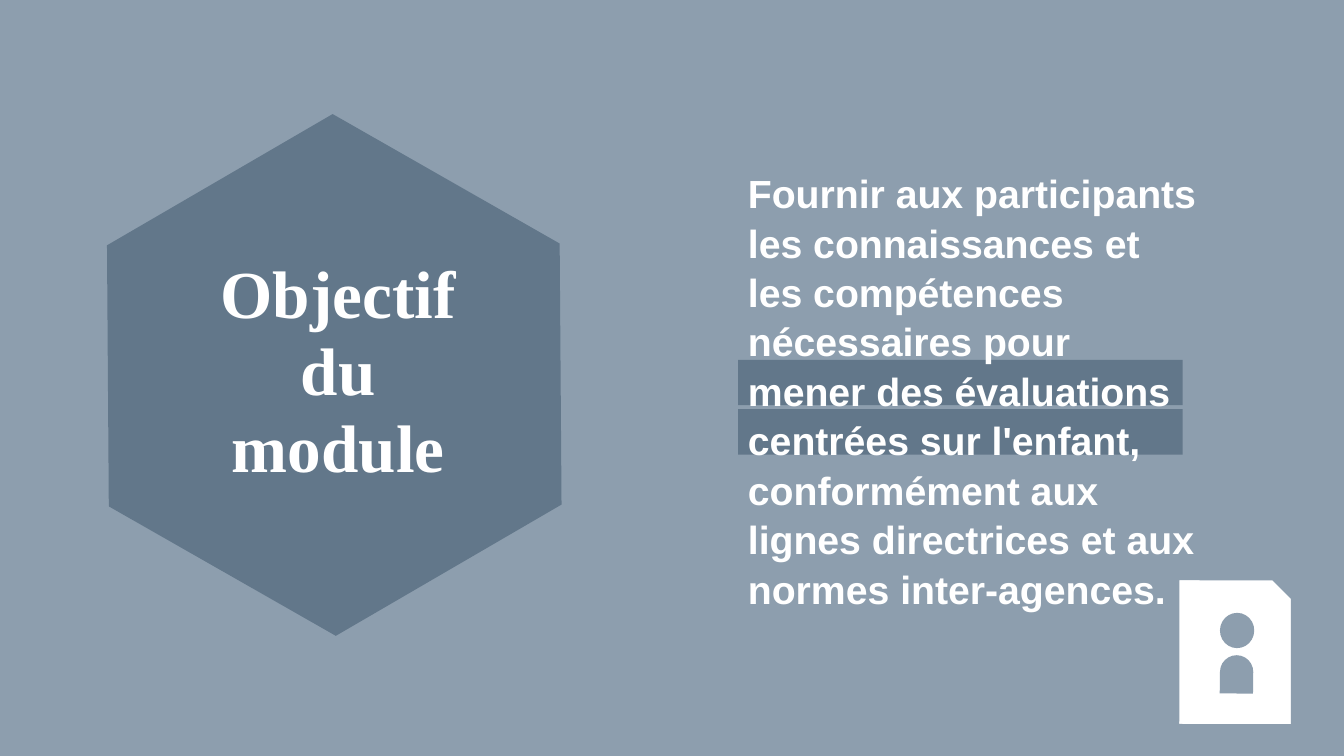
from pptx import Presentation
from pptx.dml.color import RGBColor
from pptx.enum.shapes import MSO_SHAPE as Shape
from pptx.enum.text import MSO_ANCHOR as Anchor, PP_ALIGN as Align
from pptx.util import Inches, Pt

COLORS = {"mist": "8D9EAE", "slate": "62778A", "white": "FFFFFF"}
TITLE = "Objectif du module"
GOAL = ("Fournir aux participants les connaissances et les compétences nécessaires "
        "pour mener des évaluations centrées sur l'enfant, conformément aux lignes "
        "directrices et aux normes inter-agences.")


def color(name):
    """Return the named palette colour."""
    return RGBColor.from_string(COLORS[name])


def add_block(page, kind, box, fill, rotation=0, adjustments=(), outline=None):
    """Add a flat filled shape in the box, optionally outlined."""
    shape = page.shapes.add_shape(kind, *map(Inches, box))
    shape.shadow.inherit = False
    shape.rotation = rotation
    for index, value in enumerate(adjustments):
        shape.adjustments[index] = value
    shape.fill.solid()
    shape.fill.fore_color.rgb = color(fill)
    if outline:
        shape.line.color.rgb = color(outline)
        shape.line.width = Pt(1)
    else:
        shape.line.fill.background()


def add_text(page, box, text, font, layout, anchor=Anchor.TOP):
    """Add one wrapped white bold paragraph in the box."""
    frame = page.shapes.add_textbox(*map(Inches, box)).text_frame
    frame.word_wrap = True
    frame.vertical_anchor = anchor
    para = frame.paragraphs[0]
    for name, value in layout.items():
        setattr(para, name, value)
    span = para.add_run()
    span.text = text
    for name, value in {**font, "bold": True}.items():
        setattr(span.font, name, value)
    span.font.color.rgb = color("white")


def add_title(page, left, top, width, height):
    """Draw the turned hexagon in the box with the title at its centre."""
    add_block(page, Shape.HEXAGON, (left, top, width, height), "slate", 29.7, (0.29, 1.155))
    add_text(page, (left + 1.1, top + 1.91, 3.07, 0.61), TITLE,
             {"name": "Times New Roman", "size": Pt(48)},
             {"alignment": Align.CENTER, "line_spacing": 0.95}, Anchor.MIDDLE)


def add_goal(page, left, top, width, height):
    """Write the goal in the box over the two bars that highlight its key lines."""
    for row in range(2):
        add_block(page, Shape.RECTANGLE, (left, top + 1.96 + row * 0.49, 4.41, 0.45), "slate")
    add_text(page, (left, top, width, height), GOAL,
             {"name": "Arial", "size": Pt(28)},
             {"alignment": Align.LEFT, "line_spacing": 1.05})


def add_person_card(page, left, top, width, height):
    """Draw a card with a clipped corner and a simple person in the box."""
    add_block(page, Shape.SNIP_1_RECTANGLE, (left, top, width, height), "white", 0.1,
              outline="mist")
    add_block(page, Shape.ROUND_2_SAME_RECTANGLE, (left + 0.41, top + 0.75, 0.33, 0.38),
              "mist", 0.7, (0.5, 0))
    add_block(page, Shape.OVAL, (left + 0.41, top + 0.33, 0.34, 0.35), "mist", 0.7)


def main():
    """Build the slide and save it."""
    deck = Presentation()
    deck.slide_width, deck.slide_height = Inches(13.33), Inches(7.5)
    page = deck.slides.add_slide(deck.slide_layouts[6])
    page.background.fill.solid()
    page.background.fill.fore_color.rgb = color("mist")
    add_title(page, 0.72, 1.48, 5.19, 4.48)
    add_person_card(page, 11.69, 5.75, 1.12, 1.44)
    add_goal(page, 7.32, 1.61, 4.66, 4.3)
    deck.save("out.pptx")


if __name__ == "__main__":
    main()
